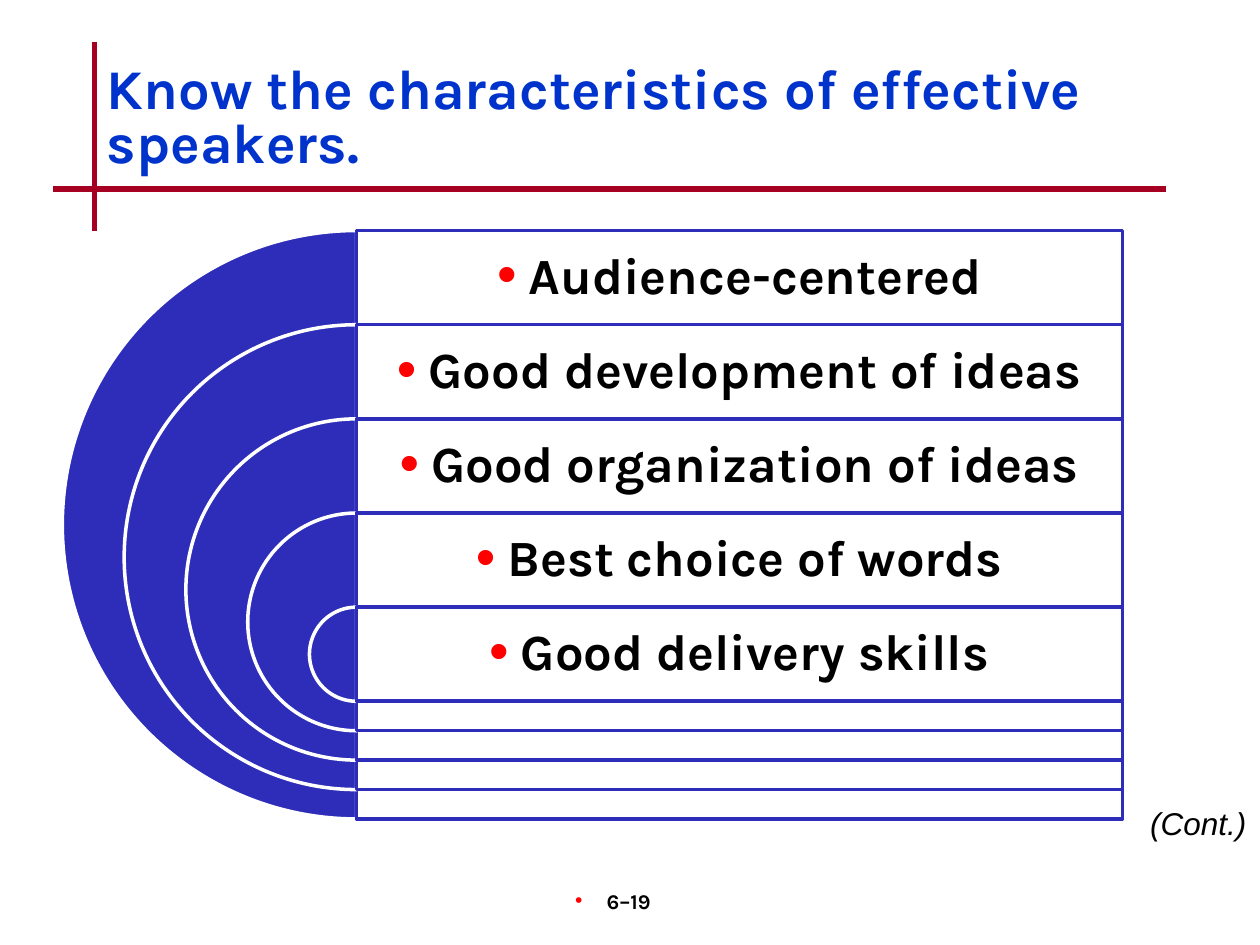
from lxml.etree import SubElement
from pptx import Presentation
from pptx.dml.color import RGBColor
from pptx.enum.shapes import MSO_CONNECTOR, MSO_SHAPE
from pptx.enum.text import MSO_ANCHOR, PP_ALIGN
from pptx.oxml.ns import qn
from pptx.util import Inches, Pt

THEME = {
    "white": RGBColor.from_string("FFFFFF"),
    "indigo": RGBColor.from_string("2D2DB9"),
    "crimson": RGBColor.from_string("A50021"),
    "blue": RGBColor.from_string("0033CC"),
    "black": RGBColor.from_string("000000"),
    "bullet": "FF0000",
    "title": {"name": "Karla", "size": Pt(32), "bold": True},
    "trait": {"name": "Karla", "size": Pt(29), "bold": True},
    "number": {"name": "Karla", "size": Pt(12), "bold": True},
    "continued": {"name": "Arial", "size": Pt(18), "italic": True},
    "rule": Pt(3),
    "outline": Pt(2),
}

deck = Presentation()
deck.slide_width, deck.slide_height = Inches(10), Inches(7.5)
page = deck.slides.add_slide(deck.slide_layouts[6])


def add_text(area, words, style, color, frame_format, para_format, bullet_size=None):
    box = page.shapes.add_textbox(*map(Inches, area))
    frame = box.text_frame
    for name, value in frame_format.items():
        setattr(frame, name, value)
    para = frame.paragraphs[0]
    for name, value in para_format.items():
        setattr(para, name, value)
    if bullet_size:
        settings = para._p.get_or_add_pPr()
        settings.set("marL", str(Inches(0.25)))
        settings.set("indent", str(-Inches(0.25)))
        tint = SubElement(settings, qn("a:buClr"))
        SubElement(tint, qn("a:srgbClr"), val=THEME["bullet"])
        SubElement(settings, qn("a:buSzPct"), val=str(bullet_size * 1000))
        SubElement(settings, qn("a:buFont"), typeface="Arial")
        SubElement(settings, qn("a:buChar"), char="•")
    span = para.add_run()
    span.text = words
    for name, value in THEME[style].items():
        setattr(span.font, name, value)
    span.font.color.rgb = THEME[color]


def add_block(kind, area, fill, line):
    block = page.shapes.add_shape(kind, *map(Inches, area))
    block.shadow.inherit = False
    block.fill.solid()
    block.fill.fore_color.rgb = THEME[fill]
    block.line.color.rgb = THEME[line]
    block.line.width = THEME["outline"]
    return block


for ends in ((0.75, 0.33, 0.75, 1.83), (0.42, 1.5, 9.25, 1.5)):
    rule = page.shapes.add_connector(MSO_CONNECTOR.STRAIGHT, *map(Inches, ends))
    rule.line.color.rgb = THEME["crimson"]
    rule.line.width = THEME["rule"]
    SubElement(rule._element.spPr, qn("a:effectLst"))

axis, top, width, height = 2.83, 1.83, 6.08, 4.67
row = 0.16 * height
trait_frame = {"word_wrap": True, "vertical_anchor": MSO_ANCHOR.MIDDLE}
for side in ("left", "top", "right", "bottom"):
    trait_frame[f"margin_{side}"] = Inches(0.12)
traits = (
    "Audience-centered",
    "Good development of ideas",
    "Good organization of ideas",
    "Best choice of words",
    "Good delivery skills",
)
for index, trait in enumerate(traits):
    row_top = top + index * row
    diameter = height * (1 - 0.21 * index)
    half = add_block(
        MSO_SHAPE.PIE,
        (axis - diameter / 2, row_top, diameter, diameter),
        "indigo",
        "white",
    )
    half.adjustments[0], half.adjustments[1] = 54, 162
    panel = add_block(
        MSO_SHAPE.RECTANGLE, (axis, row_top, width, diameter), "white", "indigo"
    )
    shade = panel._element.spPr.find(qn("a:solidFill"))[0]
    SubElement(shade, qn("a:alpha"), val="90000")
    add_text(
        (axis, row_top, width, row),
        trait,
        "trait",
        "black",
        trait_frame,
        {"alignment": PP_ALIGN.CENTER, "line_spacing": 0.9},
        bullet_size=110,
    )

add_text(
    (0.75, 0.33, 8.5, 1.25),
    "Know the characteristics of effective speakers.",
    "title",
    "blue",
    {"word_wrap": True, "vertical_anchor": MSO_ANCHOR.MIDDLE},
    {"line_spacing": 0.8},
)
add_text(
    (3.92, 7, 2.08, 0.5),
    "6–19",
    "number",
    "black",
    {"word_wrap": True, "margin_right": Inches(0.29)},
    {"alignment": PP_ALIGN.CENTER},
    bullet_size=100,
)
add_text(
    (9.03, 6.33, 0.97, 0.4),
    "(Cont.)",
    "continued",
    "black",
    {"word_wrap": False},
    {"alignment": PP_ALIGN.LEFT},
)

deck.save("out.pptx")
